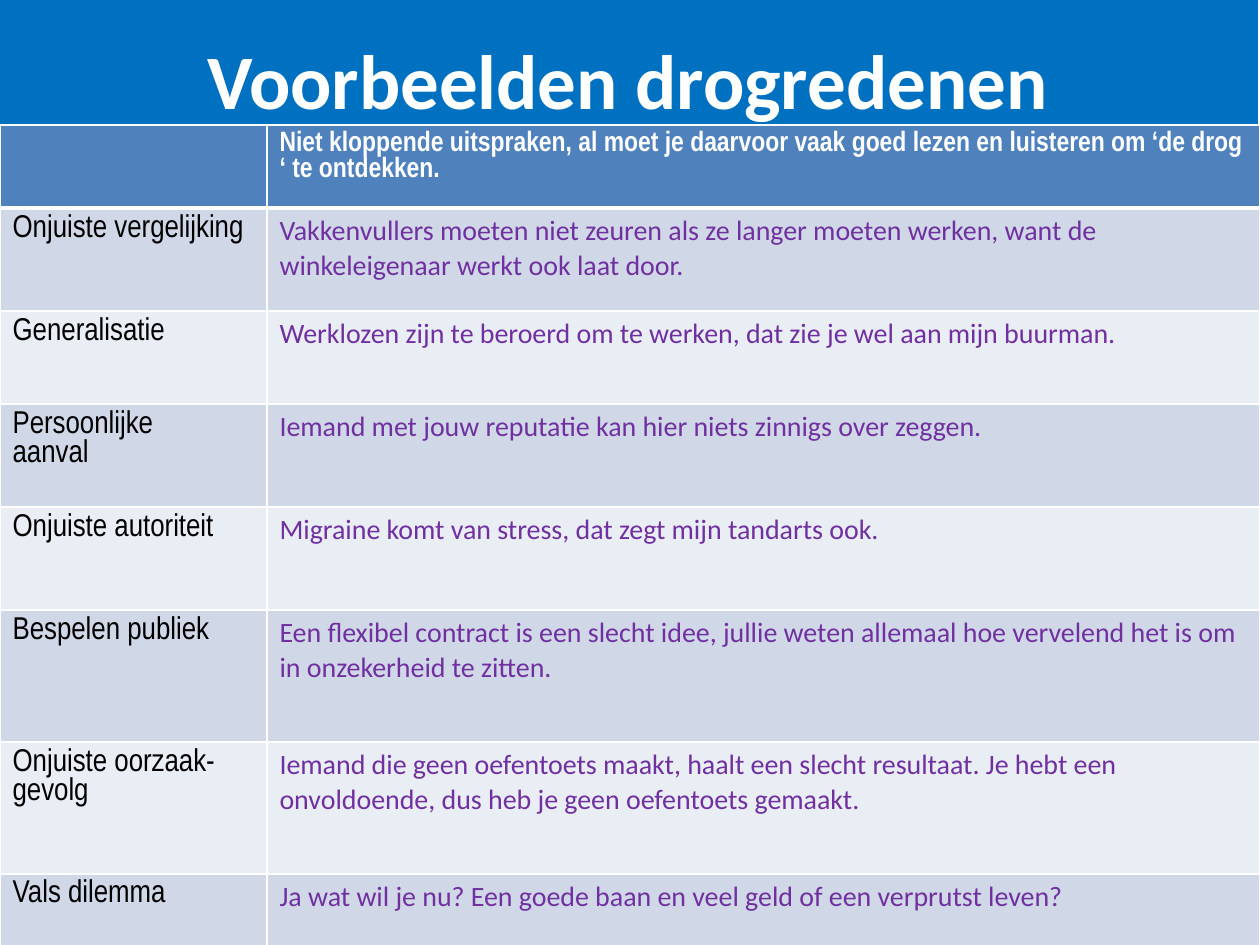
from dataclasses import dataclass

from lxml import etree
from pptx import Presentation
from pptx.dml.color import RGBColor
from pptx.enum.text import MSO_ANCHOR, MSO_AUTO_SIZE, PP_ALIGN
from pptx.oxml.ns import qn
from pptx.util import Pt

CENTER = PP_ALIGN.CENTER
MIDDLE = MSO_ANCHOR.MIDDLE
NO_FIT = MSO_AUTO_SIZE.NONE
EMU_PER_PX = 914400 // 126
TITLE_ONLY = 5


@dataclass(frozen=True)
class Theme:
    banner: str = "0070C0"
    header: str = "4F81BD"
    bands: tuple = ("D0D8E8", "E9EDF4")
    white: str = "FFFFFF"
    black: str = "000000"
    example: str = "7030A0"
    body_font: str = "Calibri"
    narrow_font: str = "Arial Narrow"
    title_size: int = 44
    label_size: int = 18
    text_size: int = 16
    thin: int = 1
    thick: int = 3


THEME = Theme()

TITLE = "Voorbeelden drogredenen"
HEADING = ("Niet kloppende uitspraken, al moet je daarvoor vaak goed lezen "
           "en luisteren om ‘de drog ‘ te ontdekken.")
FALLACIES = [
    ("Onjuiste vergelijking", 103,
     "Vakkenvullers moeten niet zeuren als ze langer moeten werken, "
     "want de winkeleigenaar werkt ook laat door."),
    ("Generalisatie", 93,
     "Werklozen zijn te beroerd om te werken, dat zie je wel aan mijn buurman."),
    ("Persoonlijke\naanval", 103,
     "Iemand met jouw reputatie kan hier niets zinnigs over zeggen."),
    ("Onjuiste autoriteit", 103,
     "Migraine komt van stress, dat zegt mijn tandarts ook."),
    ("Bespelen publiek", 132,
     "Een flexibel contract is een slecht idee, jullie weten allemaal "
     "hoe vervelend het is om in onzekerheid te zitten."),
    ("Onjuiste oorzaak-gevolg", 132,
     "Iemand die geen oefentoets maakt, haalt een slecht resultaat. "
     "Je hebt een onvoldoende, dus heb je geen oefentoets gemaakt."),
    ("Vals dilemma", 93,
     "Ja wat wil je nu? Een goede baan en veel geld of een verprutst leven?"),
]
HEADER_HEIGHT = 83
COLUMN_WIDTHS = (267, 993)


def px(n):
    return n * EMU_PER_PX


def set_fill(fill, color):
    fill.solid()
    fill.fore_color.rgb = RGBColor.from_string(color)


def write(tf, text, font, size, color, bold=False, align=None):
    for i, line in enumerate(text.split("\n")):
        p = tf.add_paragraph() if i else tf.paragraphs[0]
        p.alignment = align
        r = p.add_run()
        r.text = line
        r.font.name = font
        r.font.size = Pt(size)
        r.font.bold = bold
        r.font.color.rgb = RGBColor.from_string(color)


def set_borders(cell, top, bottom):
    tc_pr = cell._tc.get_or_add_tcPr()
    widths = {"lnL": THEME.thin, "lnR": THEME.thin, "lnT": top, "lnB": bottom}
    for i, (side, width) in enumerate(widths.items()):
        ln = etree.Element(qn(f"a:{side}"), w=str(Pt(width)))
        fill = etree.SubElement(ln, qn("a:solidFill"))
        etree.SubElement(fill, qn("a:srgbClr"), val=THEME.white)
        tc_pr.insert(i, ln)


def add_title(s):
    sp = s.shapes.title
    sp.left, sp.top, sp.width, sp.height = px(-2), px(0), px(1260), px(157)
    set_fill(sp.fill, THEME.banner)
    tf = sp.text_frame
    tf.word_wrap = True
    tf.auto_size = NO_FIT
    tf.vertical_anchor = MIDDLE
    write(tf, TITLE, THEME.body_font, THEME.title_size, THEME.white, True, CENTER)


def add_fallacy_table(s):
    heights = [HEADER_HEIGHT] + [height for _, height, _ in FALLACIES]
    table = s.shapes.add_table(len(heights), len(COLUMN_WIDTHS), px(0), px(125),
                               px(sum(COLUMN_WIDTHS)), px(sum(heights))).table
    for column, width in zip(table.columns, COLUMN_WIDTHS):
        column.width = px(width)
    for i, (row, height) in enumerate(zip(table.rows, heights)):
        row.height = px(height)
        color = THEME.bands[(i - 1) % 2] if i else THEME.header
        top = THEME.thick if i == 1 else THEME.thin
        bottom = THEME.thin if i else THEME.thick
        for cell in row.cells:
            set_fill(cell.fill, color)
            set_borders(cell, top, bottom)

    write(table.cell(0, 1).text_frame, HEADING, THEME.narrow_font,
          THEME.text_size, THEME.white, True)
    for i, (label, _, example) in enumerate(FALLACIES, 1):
        write(table.cell(i, 0).text_frame, label, THEME.narrow_font,
              THEME.label_size, THEME.black)
        write(table.cell(i, 1).text_frame, example, THEME.body_font,
              THEME.text_size, THEME.example)


def main():
    prs = Presentation()
    prs.slide_width, prs.slide_height = px(1260), px(945)
    s = prs.slides.add_slide(prs.slide_layouts[TITLE_ONLY])
    set_fill(s.background.fill, THEME.white)
    add_title(s)
    add_fallacy_table(s)
    prs.save("out.pptx")


if __name__ == "__main__":
    main()
